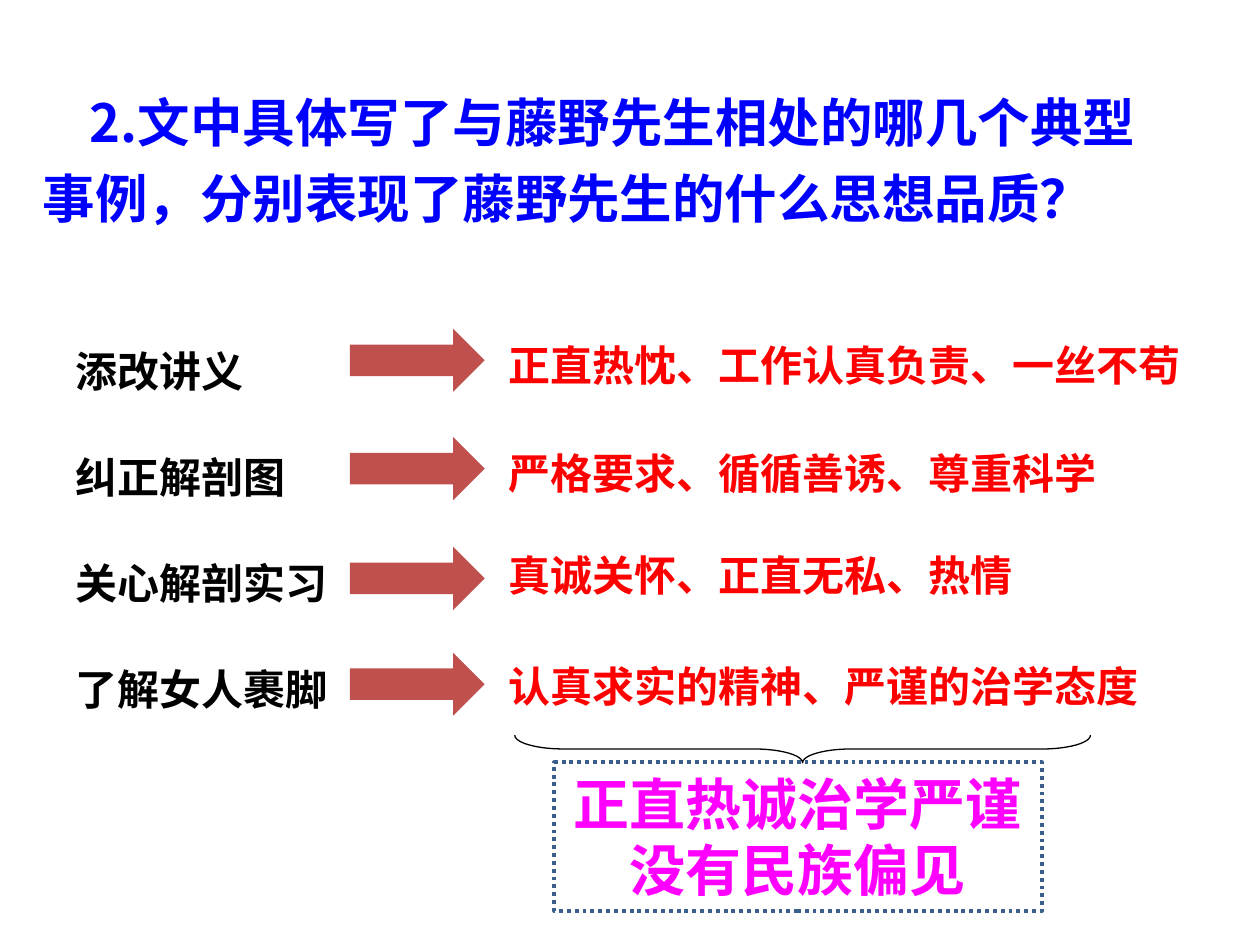
"""Build a slide pairing story episodes with the qualities they reveal."""
from dataclasses import dataclass

from lxml import etree
from pptx import Presentation
from pptx.dml.color import RGBColor
from pptx.enum.dml import MSO_LINE
from pptx.enum.shapes import MSO_SHAPE
from pptx.enum.text import MSO_ANCHOR, PP_ALIGN
from pptx.oxml.ns import qn
from pptx.util import Pt

ARROW = MSO_SHAPE.RIGHT_ARROW
BRACE = MSO_SHAPE.RIGHT_BRACE
RECTANGLE = MSO_SHAPE.RECTANGLE
DOTTED = MSO_LINE.ROUND_DOT
LEFT = PP_ALIGN.LEFT
CENTER = PP_ALIGN.CENTER
MIDDLE = MSO_ANCHOR.MIDDLE

CJK_FONT = "Noto Sans CJK SC"
LATIN_FONT = "Arial"
LABEL_TOP = 182.9
LABEL_PITCH = 60.5


@dataclass(frozen=True)
class Area:
    """A rectangle on the slide, in points."""
    left: float
    top: float
    width: float
    height: float

    def lengths(self) -> tuple:
        """Return the four lengths for python-pptx."""
        return Pt(self.left), Pt(self.top), Pt(self.width), Pt(self.height)


@dataclass(frozen=True)
class Style:
    """The look of a text."""
    font: str
    size: float
    color: str
    line_height: float
    align: PP_ALIGN = LEFT
    indent: float = 0


@dataclass(frozen=True)
class Episode:
    """An episode, the quality it shows and their places."""
    label: str
    label_width: float
    arrow_top: float
    quality: str
    quality_top: float


TITLE = Style(CJK_FONT, 30, "0000FF", 43.4, indent=27)
LABEL = Style(LATIN_FONT, 24, "000000", 40)
QUALITY = Style(LATIN_FONT, 24, "FF0000", 32)
SUMMARY = Style(CJK_FONT, 32, "FF00FF", 37.7, align=CENTER)

EPISODES = [
    Episode("添改讲义", 115.2, 187.9, "正直热忱、工作认真负责、一丝不苟", 187.2),
    Episode("纠正解剖图", 158.4, 249.8, "严格要求、循循善诱、尊重科学", 249.1),
    Episode("关心解剖实习", 197.3, 312.5, "真诚关怀、正直无私、热情", 307.4),
    Episode("了解女人裹脚", 163.4, 373, "认真求实的精神、严谨的治学态度", 370.8),
]


def rgb(color: str) -> RGBColor:
    """Turn a hex string into a colour."""
    return RGBColor.from_string(color)


def write(frame, lines: list[str], style: Style) -> None:
    """Write one paragraph per line in the given style."""
    frame.word_wrap = True
    for index, line in enumerate(lines):
        para = frame.paragraphs[0] if index == 0 else frame.add_paragraph()
        para.text = line
        para.alignment = style.align
        para.line_spacing = Pt(style.line_height)
        font = para.font
        font.name, font.size, font.bold = style.font, Pt(style.size), True
        font.color.rgb = rgb(style.color)
        properties = para._p.get_or_add_pPr()
        properties.set("indent", str(Pt(style.indent)))
        latin = properties.find(".//" + qn("a:latin"))
        east_asian = etree.Element(qn("a:ea"), typeface=CJK_FONT)
        latin.addnext(east_asian)


def add_text(page, area: Area, text: str, style: Style) -> None:
    """Add a text box with one paragraph."""
    box = page.shapes.add_textbox(*area.lengths())
    write(box.text_frame, [text], style)


def add_shape(page, kind: MSO_SHAPE, area: Area):
    """Add a preset shape without shadow or fill."""
    shape = page.shapes.add_shape(kind, *area.lengths())
    shape.shadow.inherit = False
    shape.fill.background()
    return shape


def add_episode(page, index: int, episode: Episode) -> None:
    """Add a label, an arrow and the quality it points to."""
    label_top = LABEL_TOP + index * LABEL_PITCH
    add_text(page, Area(36, label_top, episode.label_width, 45.4), episode.label, LABEL)
    arrow = add_shape(page, ARROW, Area(200, episode.arrow_top, 77, 36))
    arrow.fill.solid()
    arrow.fill.fore_color.rgb = rgb("C0504D")
    arrow.line.fill.background()
    add_text(page, Area(283.7, episode.quality_top, 417.6, 36), episode.quality, QUALITY)


def add_brace(page) -> None:
    """Add the brace that gathers the qualities."""
    brace = add_shape(page, BRACE, Area(450.7, 263.5, 15.8, 329))
    brace.rotation = 90
    brace.adjustments[0] = 1.768
    brace.adjustments[1] = 0.5
    brace.line.color.rgb = rgb("000000")
    brace.line.width = Pt(0.75)


def add_summary(page) -> None:
    """Add the dotted box with the conclusion."""
    box = add_shape(page, RECTANGLE, Area(316.8, 435.6, 278.6, 85))
    box.line.color.rgb = rgb("3A5F8C")
    box.line.width = Pt(2.25)
    box.line.dash_style = DOTTED
    box.text_frame.vertical_anchor = MIDDLE
    write(box.text_frame, ["正直热诚治学严谨", "没有民族偏见"], SUMMARY)


def main() -> None:
    """Build and save the deck."""
    deck = Presentation()
    deck.slide_width, deck.slide_height = Pt(720), Pt(540)
    page = deck.slides.add_slide(deck.slide_layouts[6])
    question = "2.文中具体写了与藤野先生相处的哪几个典型事例，分别表现了藤野先生的什么思想品质？"
    add_text(page, Area(17.3, 40.3, 642.2, 138.2), question, TITLE)
    for index, episode in enumerate(EPISODES):
        add_episode(page, index, episode)
    add_brace(page)
    add_summary(page)
    deck.save("out.pptx")


if __name__ == "__main__":
    main()
